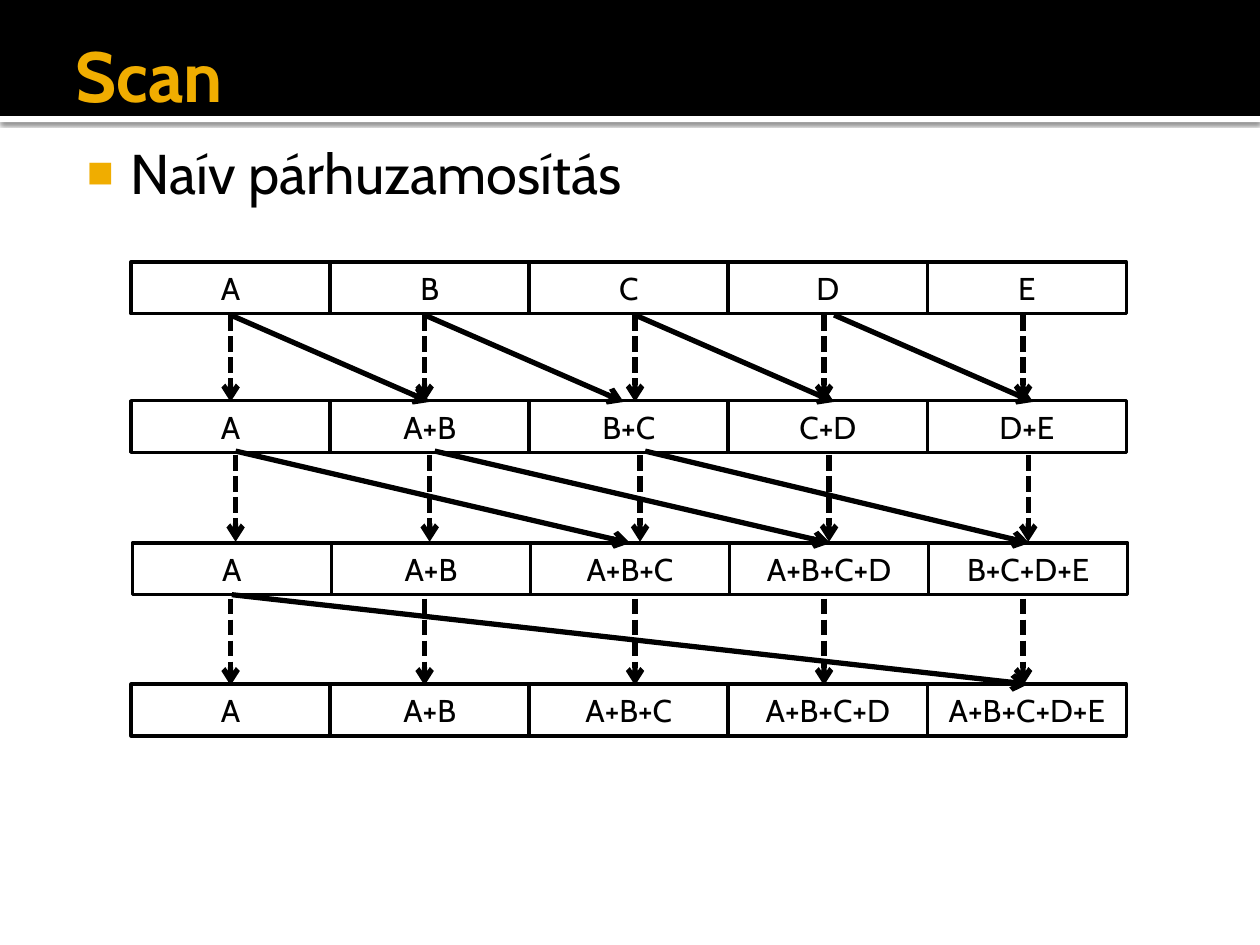
from dataclasses import dataclass

from lxml.etree import SubElement
from pptx import Presentation
from pptx.dml.color import RGBColor
from pptx.enum.dml import MSO_LINE
from pptx.enum.shapes import MSO_CONNECTOR, MSO_SHAPE
from pptx.enum.text import MSO_ANCHOR, PP_ALIGN
from pptx.oxml.ns import qn
from pptx.util import Inches, Pt


@dataclass(frozen=True)
class Theme:
    """Colours, font and sizes of the slide."""
    black: RGBColor = RGBColor(0, 0, 0)
    white: RGBColor = RGBColor(255, 255, 255)
    accent: RGBColor = RGBColor(0xF0, 0xAD, 0x00)
    font: str = "Cabin"
    title_size: float = 40.5
    body_size: float = 32
    cell_size: float = 18
    cell_line: float = 2
    arrow_line: float = 3


THEME = Theme()
LETTERS = "ABCDE"
CELL_WIDTH, CELL_HEIGHT = 1.58, 0.41
ROWS = [(1.04, 2.08), (1.04, 3.18), (1.05, 4.31), (1.04, 5.43)]
KEEP_COLUMNS = [1.83, 3.37, 5.04, 6.54, 8.12]
KEEP_STEPS = [(0, 2.5), (0.04, 3.61), (0, 4.75)]
KEEP_LENGTH = 0.69
ADD_STEPS = [
    (2.5, 3.19, [(1.83, 3.41), (3.37, 4.95), (5.04, 6.62), (6.62, 8.2)]),
    (3.58, 4.31, [(1.87, 5), (3.45, 6.59), (5.12, 8.17)]),
    (4.72, 5.43, [(1.84, 8.16)]),
]


def add_box(shapes, left, top, width, height, fill=None):
    """Add a rectangle without shadow, outlined when it has no fill."""
    box = shapes.add_shape(MSO_SHAPE.RECTANGLE, Inches(left), Inches(top), Inches(width), Inches(height))
    box.shadow.inherit = False
    if fill is None:
        box.fill.background()
        box.line.color.rgb = THEME.black
        box.line.width = Pt(THEME.cell_line)
    else:
        box.fill.solid()
        box.fill.fore_color.rgb = fill
        box.line.fill.background()
    return box


def write(para, text, size, color, bold=False):
    """Fill a paragraph with text in the theme font."""
    para.text = text
    para.font.name = THEME.font
    para.font.size = Pt(size)
    para.font.color.rgb = color
    para.font.bold = bold


def add_header(shapes):
    """Add the black band above a white strip that casts a shadow."""
    strip = add_box(shapes, 0, 0.92, 10, 0.05, THEME.white)
    effects = strip._element.spPr.find(qn("a:effectLst"))
    shadow = SubElement(effects, qn("a:outerShdw"), blurRad=str(Pt(2.5)), dist=str(Pt(0.8)),
                        dir="5400000", rotWithShape="0")
    color = SubElement(shadow, qn("a:srgbClr"), val=str(THEME.black))
    SubElement(color, qn("a:alpha"), val="60000")
    add_box(shapes, 0, 0, 10, 0.92, THEME.black)


def add_text(shapes, top, height, insets, anchor):
    """Add a wrapping text box across the slide and return its first paragraph."""
    frame = shapes.add_textbox(Inches(0.5), Inches(top), Inches(9), Inches(height)).text_frame
    frame.word_wrap = True
    frame.vertical_anchor = anchor
    frame.margin_left, frame.margin_top, frame.margin_right, frame.margin_bottom = map(Inches, insets)
    return frame.paragraphs[0]


def add_bullet(para):
    """Give a paragraph a hanging square bullet."""
    properties = para._p.get_or_add_pPr()
    properties.set("marL", str(Inches(0.48)))
    properties.set("indent", str(Inches(-0.35)))
    color = SubElement(properties, qn("a:buClr"))
    SubElement(color, qn("a:srgbClr"), val=str(THEME.accent))
    SubElement(properties, qn("a:buSzPct"), val="80000")
    SubElement(properties, qn("a:buFont"), typeface="Arial")
    SubElement(properties, qn("a:buChar"), char="■")


def add_row(shapes, left, top, reach):
    """Add a group of cells, each summing up to reach letters."""
    row = shapes.add_group_shape().shapes
    for column in range(len(LETTERS)):
        box = add_box(row, left + column * CELL_WIDTH, top, CELL_WIDTH, CELL_HEIGHT)
        box.text_frame.vertical_anchor = MSO_ANCHOR.MIDDLE
        para = box.text_frame.paragraphs[0]
        label = "+".join(LETTERS[max(0, column + 1 - reach):column + 1])
        write(para, label, THEME.cell_size, THEME.black)
        para.alignment = PP_ALIGN.CENTER


def add_arrow(shapes, start, end, dashed=False):
    """Add a straight arrow between two points."""
    arrow = shapes.add_connector(MSO_CONNECTOR.STRAIGHT, *map(Inches, start + end))
    arrow.line.color.rgb = THEME.black
    arrow.line.width = Pt(THEME.arrow_line)
    if dashed:
        arrow.line.dash_style = MSO_LINE.SQUARE_DOT
    properties = arrow._element.spPr
    SubElement(properties.find(qn("a:ln")), qn("a:tailEnd"), type="arrow")
    SubElement(properties, qn("a:effectLst"))


def main():
    """Build the scan slide and save it."""
    deck = Presentation()
    deck.slide_width, deck.slide_height = Inches(10), Inches(7.5)
    shapes = deck.slides.add_slide(deck.slide_layouts[6]).shapes
    add_header(shapes)
    title = add_text(shapes, 0.17, 0.83, (0.1, 0.05, 0.05, 0.05), MSO_ANCHOR.MIDDLE)
    write(title, "Scan", THEME.title_size, THEME.accent, bold=True)
    body = add_text(shapes, 1, 6, (0.06, 0.1, 0.1, 0.05), MSO_ANCHOR.TOP)
    write(body, "Naív párhuzamosítás", THEME.body_size, THEME.black)
    add_bullet(body)
    for step, (left, top) in enumerate(ROWS):
        add_row(shapes, left, top, 2 ** step)
    for offset, top in KEEP_STEPS:
        for column in KEEP_COLUMNS:
            x = column + offset
            add_arrow(shapes, (x, top), (x, top + KEEP_LENGTH), dashed=True)
    for top, bottom, spans in ADD_STEPS:
        for start, end in spans:
            add_arrow(shapes, (start, top), (end, bottom))
    deck.save("out.pptx")


if __name__ == "__main__":
    main()
